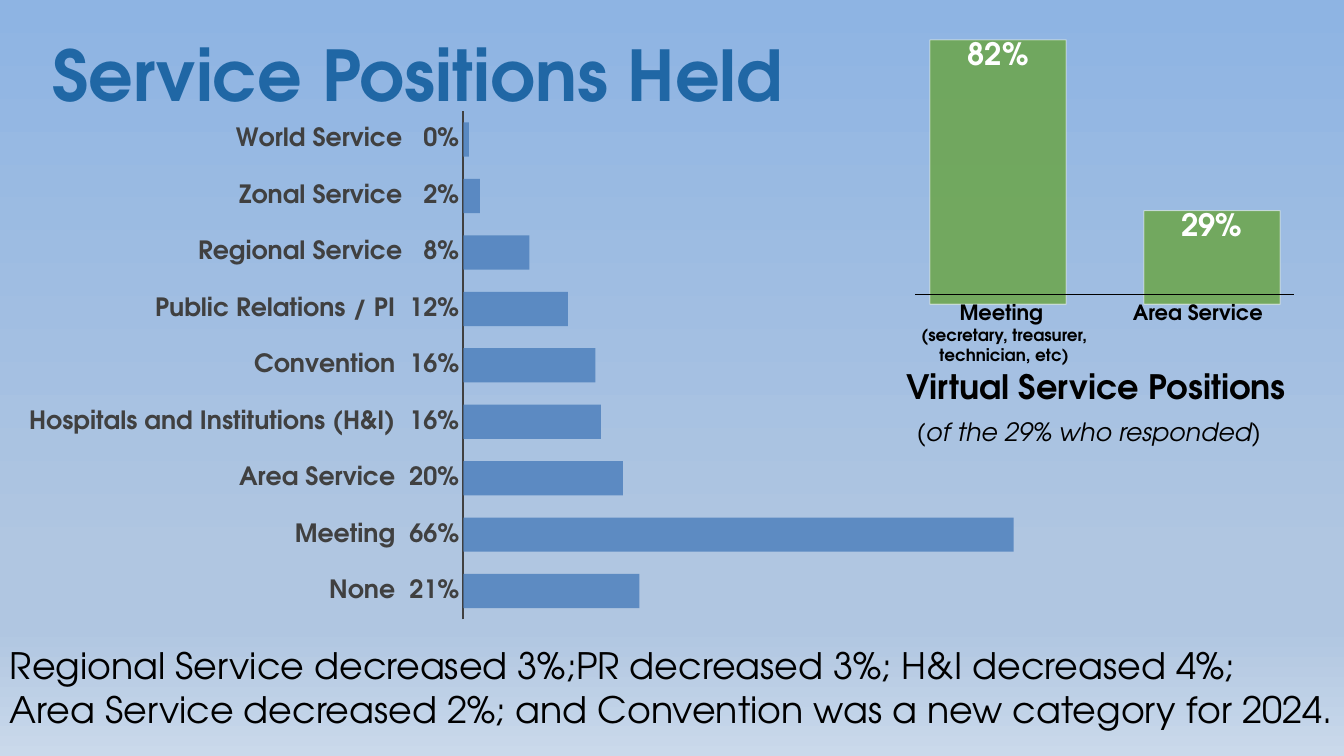
from lxml import etree
from pptx import Presentation
from pptx import util as u
from pptx.chart.data import CategoryChartData
from pptx.dml.color import RGBColor
from pptx.enum import chart as ch, shapes, text
from pptx.oxml import parse_xml
from pptx.oxml.ns import nsdecls, qn

FONT = "TeX Gyre Adventor"
COLORS = {
    "black": "000000", "white": "FFFFFF", "title": "2067A5", "axis": "404040",
    "bar": "4F81BD", "column": "6BA549",
}
SKY = [(0, "8EB4E3"), (74, "B0C6E1"), (83, "B0C6E1"), (100, "CAD9EB")]
POSITIONS = [
    ("World Service   0%", 1), ("Zonal Service   2%", 3),
    ("Regional Service   8%", 12), (" Public Relations / PI  12%", 19),
    ("Convention  16%", 24), ("Hospitals and Institutions (H&I)  16%", 25),
    ("Area Service  20%", 29), ("Meeting  66%", 100), ("None  21%", 32),
]
VIRTUAL = [("1", 0.82), ("2", 0.29)]


def rgb(name):
    return RGBColor.from_string(COLORS[name])


def set_font(font, size, color="black", bold=None, italic=None):
    font.name, font.size, font.color.rgb = FONT, u.Pt(size), rgb(color)
    font.bold, font.italic = bold, italic


def set_background(slide):
    stops = "".join(f'<a:gs pos="{pos * 1000}"><a:srgbClr val="{c}"/></a:gs>'
                    for pos, c in SKY)
    fill = parse_xml(f'<a:gradFill {nsdecls("a")} rotWithShape="1"><a:gsLst>{stops}'
                     '</a:gsLst><a:lin ang="5400000" scaled="0"/></a:gradFill>')
    bg_fill = slide.background.fill
    bg_fill.solid()
    solid = slide.background._cSld.find(".//" + qn("a:solidFill"))
    solid.getparent().replace(solid, fill)


def add_text(parent, box, paragraphs, color="black", bold=None, italic=None,
             align=None, insets=None, spacing=None, after=None):
    """Add a text box; paragraphs are (text, size) pairs, "\\n" breaks a line."""
    sp = parent.add_textbox(*map(u.Inches, box))
    tf = sp.text_frame
    tf.word_wrap = True
    if insets:
        (tf.margin_left, tf.margin_top,
         tf.margin_right, tf.margin_bottom) = map(u.Inches, insets)
    else:
        tf.auto_size = text.MSO_AUTO_SIZE.SHAPE_TO_FIT_TEXT
    for i, (words, size) in enumerate(paragraphs):
        p = tf.add_paragraph() if i else tf.paragraphs[0]
        p.alignment, p.line_spacing = align, spacing
        if after:
            p.space_after = u.Pt(after)
        for n, line in enumerate(words.split("\n")):
            if n:
                p.add_line_break()
            r = p.add_run()
            r.text = line
            set_font(r.font, size, color, bold, italic)
    return sp


def set_alpha(fill, percent):
    color = fill._xPr.find(".//" + qn("a:srgbClr"))
    etree.SubElement(color, qn("a:alpha"), val=str(percent * 1000))


def set_plot_area(chart, x, y, w, h):
    """Place the inner plot area, as fractions of the chart."""
    parts = "".join(f'<c:{tag} val="{val}"/>'
                    for tag, val in zip("xywh", (x, y, w, h)))
    layout = parse_xml(
        f'<c:layout {nsdecls("c")}><c:manualLayout><c:layoutTarget val="inner"/>'
        f'<c:xMode val="edge"/><c:yMode val="edge"/>{parts}'
        '</c:manualLayout></c:layout>')
    area = chart._chartSpace.chart.plotArea
    for old in area.findall(qn("c:layout")):
        area.remove(old)
    area.insert(0, layout)


def add_bars(slide, kind, box, rows, color, gap, maximum, plot_area):
    data = CategoryChartData(number_format="0%")
    data.categories = [name for name, _ in rows]
    data.add_series("Series 1", [value for _, value in rows])
    chart = slide.shapes.add_chart(kind, *map(u.Inches, box), data).chart
    chart.has_legend = chart.has_title = False
    chart.font.name, chart.font.size = "Calibri", u.Pt(10)
    chart.font.color.rgb = rgb("black")
    axis = chart.value_axis
    axis.minimum_scale, axis.maximum_scale = 0, maximum
    axis.has_major_gridlines = axis.visible = False
    plot = chart.plots[0]
    plot.gap_width, plot.vary_by_categories = gap, False
    fill = plot.series[0].format.fill
    fill.solid()
    fill.fore_color.rgb = rgb(color)
    set_alpha(fill, 85)
    set_plot_area(chart, *plot_area)
    return chart


def add_virtual_chart(slide):
    chart = add_bars(slide, ch.XL_CHART_TYPE.COLUMN_CLUSTERED, (8.75, 0.08, 4.42, 3),
                     VIRTUAL, "column", 57, 0.9, (0.02, 0.02, 0.96, 0.96))
    chart.category_axis.visible = False
    series = chart.plots[0].series[0]
    line = series.format.line
    line.width = u.Pt(0.75)
    line.color.rgb = rgb("white")
    set_alpha(line.fill, 50)
    labels = series.data_labels
    labels.show_value = True
    labels.number_format, labels.number_format_is_linked = "0%", False
    labels.position = ch.XL_LABEL_POSITION.INSIDE_END
    set_font(labels.font, 22, "white", bold=True)


def add_positions_chart(slide):
    chart = add_bars(slide, ch.XL_CHART_TYPE.BAR_CLUSTERED, (0.08, 1, 10.5, 5.25),
                     POSITIONS, "bar", 65, 100, (0.43, 0.02, 0.52, 0.96))
    axis = chart.category_axis
    axis.reverse_order = True
    axis.major_tick_mark = axis.minor_tick_mark = ch.XL_TICK_MARK.NONE
    axis.format.line.color.rgb = rgb("axis")
    axis.format.line.width = u.Pt(1.5)
    set_font(axis.tick_labels.font, 18, "axis", bold=True)


def add_line(slide, *ends):
    line = slide.shapes.add_connector(shapes.MSO_CONNECTOR.STRAIGHT,
                                      *map(u.Inches, ends))
    line.line.color.rgb = rgb("black")
    line.line.width = u.Pt(0.75)
    etree.SubElement(line._element.spPr, qn("a:effectLst"))


def main():
    prs = Presentation()
    prs.slide_width, prs.slide_height = u.Inches(13.33), u.Inches(7.5)
    s = prs.slides.add_slide(prs.slide_layouts[6])
    set_background(s)
    center = text.PP_ALIGN.CENTER

    add_virtual_chart(s)
    add_text(s.shapes, (0, 6.33, 13.42, 0.98), [(
        "Regional Service decreased 3%;PR decreased 3%; H&I decreased 4%; \n"
        "Area Service decreased 2%; and Convention was a new category for 2024.", 26)])
    add_text(s.shapes, (0.42, 0.25, 12, 0.83), [("Service Positions Held", 50)],
             color="title", bold=True, insets=(0.1, 0, 0.1, 0.05),
             spacing=1.07, after=8)

    captions = s.shapes.add_group_shape().shapes
    for box, paragraphs in [
        ((8.83, 3.58, 4.08, 0.5), [("Virtual Service Positions", 24)]),
        ((9, 2.92, 1.92, 1.06),
         [("Meeting ", 15), ("(secretary, treasurer, technician, etc)", 12)]),
        ((10.92, 2.92, 1.92, 0.35), [("Area Service", 15)]),
    ]:
        add_text(captions, box, paragraphs, bold=True, align=center)

    add_positions_chart(s)
    add_line(s, 9.08, 2.92, 12.83, 2.92)
    add_text(s.shapes, (8.92, 4.08, 3.83, 0.4), [("(of the 29% who responded) ", 18)],
             italic=True, align=center)
    prs.save("out.pptx")


if __name__ == "__main__":
    main()
